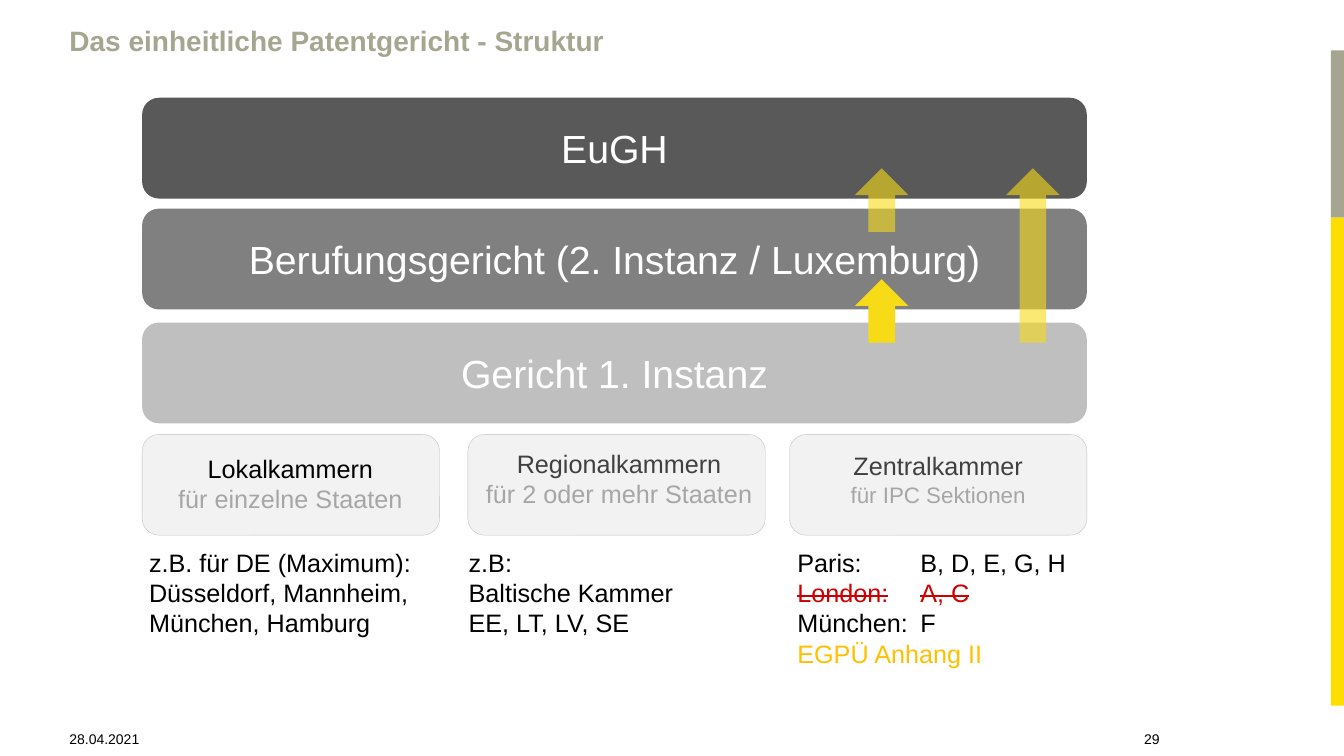
from lxml import etree
from pptx import Presentation
from pptx.dml.color import RGBColor
from pptx.enum.shapes import MSO_SHAPE as Preset
from pptx.enum.text import MSO_ANCHOR as Anchor, PP_ALIGN as Align
from pptx.oxml.ns import qn
from pptx.util import Inches, Pt

prs = Presentation()
prs.slide_width, prs.slide_height = Inches(13.33), Inches(7.5)
slide = prs.slides.add_slide(prs.slide_layouts[6])


def add_block(preset, box, color, outline=None):
    block = slide.shapes.add_shape(preset, *map(Inches, box))
    block.shadow.inherit = False
    block.fill.solid()
    block.fill.fore_color.rgb = RGBColor.from_string(color)
    if outline:
        block.line.color.rgb = RGBColor.from_string(outline)
        block.line.width = Pt(0.25)
    else:
        block.line.fill.background()
    return block


def write(frame, lines, align=Align.LEFT, anchor=Anchor.TOP):
    frame.word_wrap = True
    frame.vertical_anchor = anchor
    for index, (text, size, color, *bold) in enumerate(lines):
        paragraph = frame.add_paragraph() if index else frame.paragraphs[0]
        paragraph.text = text
        paragraph.alignment = align
        font_format = {"name": "Arial", "size": Pt(size), "bold": bool(bold)}
        for run in paragraph.runs:
            for key, value in font_format.items():
                setattr(run.font, key, value)
            run.font.color.rgb = RGBColor.from_string(color)


add_block(Preset.RECTANGLE, (13.2, 0.5, 0.13, 1.66), "A5A590")
add_block(Preset.RECTANGLE, (13.2, 2.16, 0.13, 4.84), "FFDD00")

title = slide.shapes.add_textbox(Inches(0.59), Inches(0.28), Inches(10.55), Inches(0.62)).text_frame
write(title, [("Das einheitliche Patentgericht - Struktur", 20, "A5A590", True)])
title.paragraphs[0].line_spacing = 0.7

for text, left, width, align in [
    ("28.04.2021", 0.59, 1.09, Align.LEFT),
    ("29", 10.55, 1.05, Align.RIGHT),
]:
    footer = slide.shapes.add_textbox(Inches(left), Inches(7.06), Inches(width), Inches(0.4))
    write(footer.text_frame, [(text, 10, "000000")], align, Anchor.BOTTOM)

for court, top, color in [
    ("Gericht 1. Instanz", 3.2, "BFBFBF"),
    ("EuGH", 0.97, "595959"),
    ("Berufungsgericht (2. Instanz / Luxemburg)", 2.07, "808080"),
]:
    bar = add_block(Preset.ROUNDED_RECTANGLE, (1.41, top, 9.37, 1), color)
    write(bar.text_frame, [(court, 28, "FFFFFF")], Align.CENTER, Anchor.MIDDLE)

chambers = [
    (1.41, (1.41, 4.45, 2.94, 0.71),
     [("Lokalkammern", 18, "000000"), ("für einzelne Staaten", 18, "A6A6A6")]),
    (4.64, (4.57, 4.4, 3.14, 0.81),
     [("Regionalkammern", 18, "404040"), ("für 2 oder mehr Staaten", 18, "A6A6A6")]),
    (7.83, (7.83, 4.42, 2.95, 0.77),
     [("Zentralkammer", 18, "404040"), ("für IPC Sektionen", 16, "A6A6A6")]),
]
for left, label_box, lines in chambers:
    add_block(Preset.ROUNDED_RECTANGLE, (left, 4.31, 2.95, 1), "F2F2F2", "BFBFBF")
    label = slide.shapes.add_textbox(*map(Inches, label_box))
    write(label.text_frame, lines, Align.CENTER)

examples = [
    (1.38, 3.08, 1.01,
     [("z.B. für DE (Maximum):\vDüsseldorf, Mannheim, München, Hamburg", 18, "000000")]),
    (4.55, 3.14, 1.31, [("z.B:\vBaltische Kammer\vEE, LT, LV, SE", 18, "000000")]),
    (7.81, 3.07, 1.31,
     [("Paris:\tB, D, E, G, H", 18, "000000"), ("London:\tA, C", 18, "D00000"),
      ("München:\tF", 18, "000000"), ("EGPÜ Anhang II", 18, "FFC000")]),
]
for left, width, height, lines in examples:
    seats = slide.shapes.add_textbox(Inches(left), Inches(5.38), Inches(width), Inches(height)).text_frame
    write(seats, lines)

for seat in seats.paragraphs[:3]:
    tabs = etree.SubElement(seat._p.get_or_add_pPr(), qn("a:tabLst"))
    etree.SubElement(tabs, qn("a:tab"), pos=str(Inches(1.22)), algn="l")
london = seats.paragraphs[1].runs[0]
london._r.get_or_add_rPr().set("strike", "sngStrike")

for left, top, height, opacity in [
    (8.48, 2.77, 0.63, 100),
    (8.48, 1.67, 0.63, 60),
    (9.98, 1.67, 1.73, 60),
]:
    appeal = add_block(Preset.UP_ARROW, (left, top, 0.53, height), "F7DB17")
    if opacity < 100:
        fill_color = appeal._element.spPr.find(qn("a:solidFill")).find(qn("a:srgbClr"))
        etree.SubElement(fill_color, qn("a:alpha"), val=str(opacity * 1000))

prs.save("out.pptx")
